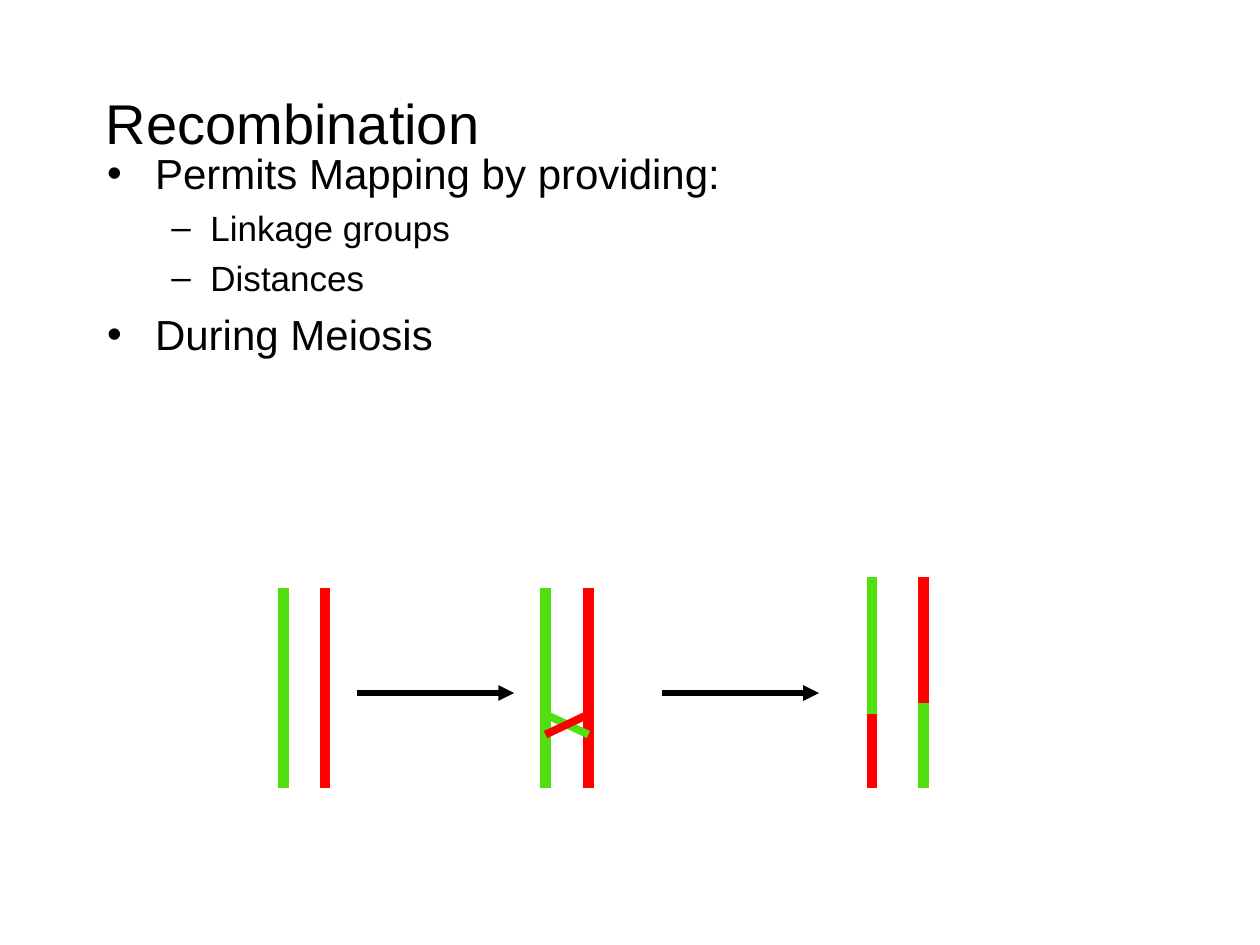
import pptx
import pptx.util
import pptx.dml.color
import pptx.enum.shapes
import pptx.oxml
import pptx.oxml.ns
from dataclasses import dataclass
from pptx.util import Inches

Pt = pptx.util.Pt
qn = pptx.oxml.ns.qn


@dataclass(frozen=True)
class Theme:
    font: str = "Arial"
    ink: str = "000000"
    green: str = "50DF11"
    red: str = "FF0000"
    title: int = 32
    sizes: tuple = (24, 20)
    strand: float = 6
    cross: float = 4.5
    arrow: float = 3


THEME = Theme()


def add_sub(parent, tag, **attrs):
    node = parent.makeelement(qn(tag), attrs)
    parent.append(node)
    return node


def add_box(slide, left, top, width, height, inset):
    box = slide.shapes.add_textbox(
        Inches(left), Inches(top), Inches(width), Inches(height))
    frame = box.text_frame
    frame.word_wrap = True
    frame.margin_left = frame.margin_right = frame.margin_bottom = 0
    frame.margin_top = Inches(inset)
    return frame


def style(para, size):
    para.font.name = THEME.font
    para.font.size = Pt(size)
    para.font.color.rgb = pptx.dml.color.RGBColor.from_string(THEME.ink)


def add_title(slide, text):
    para = add_box(slide, 0.84, 0.65, 4, 0.54, 0.05).paragraphs[0]
    para.text = text
    style(para, THEME.title)


def add_list(slide, items):
    """Write (level, text) items as a two-level bulleted list."""
    marks = (("•", 0.39, -0.38, 5.7), ("–", 0.83, -0.31, 4.8))
    frame = add_box(slide, 0.84, 1.13, 4.89, 1.69, 0.04)
    for i, (level, text) in enumerate(items):
        para = frame.add_paragraph() if i else frame.paragraphs[0]
        mark, left, hang, gap = marks[level]
        para.text = text
        para.level = level
        if i:
            para.space_before = Pt(gap)
        props = para._p.get_or_add_pPr()
        props.set("marL", str(Inches(left)))
        props.set("indent", str(Inches(hang)))
        add_sub(props, "a:buFont", typeface=THEME.font)
        add_sub(props, "a:buChar", char=mark)
        style(para, THEME.sizes[level])


def add_line(slide, start, end, color, width):
    line = slide.shapes.add_connector(
        pptx.enum.shapes.MSO_CONNECTOR.STRAIGHT,
        *(Inches(v) for v in (*start, *end)))
    line.line.color.rgb = pptx.dml.color.RGBColor.from_string(color)
    line.line.width = Pt(width)
    add_sub(line._element.spPr, "a:effectLst")
    return line


def add_strand(slide, x, top, end, color):
    add_line(slide, (x, top), (x, end), color, THEME.strand)


def add_arrow(slide, x):
    line = add_line(slide, (x, 5.5), (x + 1.25, 5.5), THEME.ink, THEME.arrow)
    add_sub(line.line._get_or_add_ln(), "a:tailEnd", type="triangle")


def add_pair(slide, x, gap):
    add_strand(slide, x + gap, 4.67, 6.25, THEME.red)
    add_strand(slide, x, 4.67, 6.25, THEME.green)


def add_cross(slide, left, right):
    top, end = 5.67, 5.83
    add_line(slide, (left, top), (right, end), THEME.green, THEME.cross)
    add_line(slide, (right, top), (left, end), THEME.red, THEME.cross)


def add_swap(slide, x, cut, upper, lower):
    """Draw a recombined strand that changes colour at the cut."""
    add_strand(slide, x, 4.58, cut, upper)
    add_strand(slide, x, cut, 6.25, lower)


def main():
    deck = pptx.Presentation()
    deck.slide_width, deck.slide_height = Inches(10), Inches(7.5)
    slide = deck.slides.add_slide(deck.slide_layouts[6])
    add_title(slide, "Recombination")
    add_list(slide, [
        (0, "Permits Mapping by providing:"),
        (1, "Linkage groups"),
        (1, "Distances"),
        (0, "During Meiosis"),
    ])
    add_pair(slide, 2.25, 0.33)
    add_arrow(slide, 2.83)
    add_pair(slide, 4.33, 0.34)
    add_cross(slide, 4.33, 4.67)
    add_arrow(slide, 5.25)
    add_swap(slide, 6.92, 5.67, THEME.green, THEME.red)
    add_swap(slide, 7.33, 5.58, THEME.red, THEME.green)
    deck.save("out.pptx")


if __name__ == "__main__":
    main()
